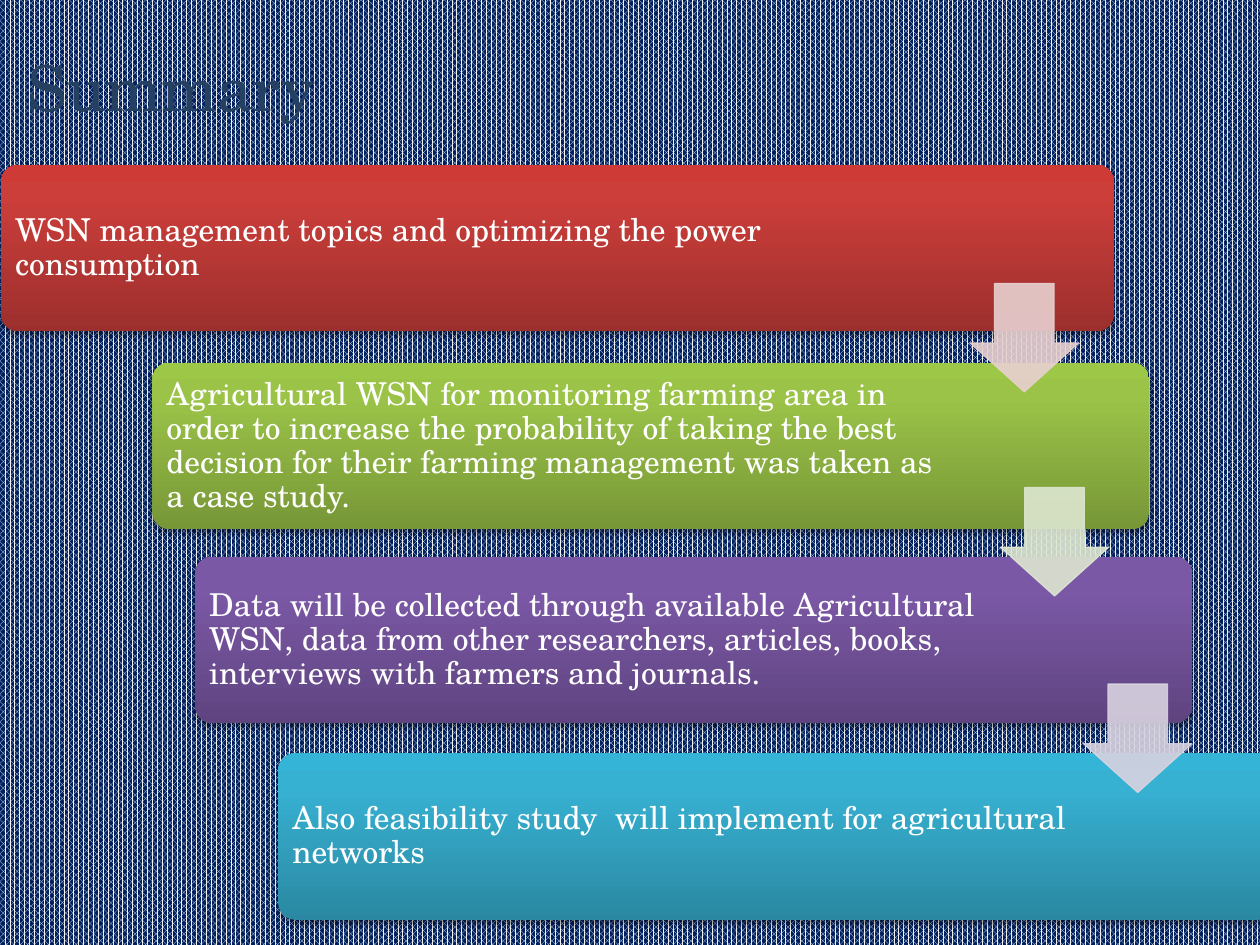
from copy import deepcopy

from lxml.etree import SubElement
from pptx import Presentation
from pptx.dml.color import RGBColor
from pptx.enum.dml import MSO_PATTERN
from pptx.enum.shapes import MSO_SHAPE
from pptx.enum.text import MSO_ANCHOR
from pptx.oxml.ns import qn
from pptx.util import Inches, Pt


def color(value):
    return RGBColor.from_string(value)


def add_text(text, left, top, width, height, size=18, ink="FFFFFF",
             side=0.07, edge=0.07, spacing=0.9):
    frame = slide.shapes.add_textbox(
        Inches(left), Inches(top), Inches(width), Inches(height)).text_frame
    frame.word_wrap = True
    frame.vertical_anchor = MSO_ANCHOR.MIDDLE
    frame.margin_left = frame.margin_right = Inches(side)
    frame.margin_top = frame.margin_bottom = Inches(edge)
    paragraph = frame.paragraphs[0]
    paragraph.line_spacing = spacing
    run = paragraph.add_run()
    run.text = text
    run.font.name = "TeX Gyre Schola"
    run.font.size = Pt(size)
    run.font.color.rgb = color(ink)


presentation = Presentation()
presentation.slide_width = Inches(10)
presentation.slide_height = Inches(7.5)
slide = presentation.slides.add_slide(presentation.slide_layouts[6])

backdrop = slide.background.fill
backdrop.patterned()
backdrop.pattern = MSO_PATTERN.PERCENT_75
backdrop.fore_color.rgb = color("F2F2F2")
backdrop.back_color.rgb = color("002060")

CARD_HEIGHT = 1.32
TEXT_INSET = 0.04

# left, top, card width, text width, gradient from bottom to top, wording
steps = [
    (0.01, 1.31, 8.83, 7.13, ("9C2F2D", "CB3E3A", "CE3B37"),
     "WSN management topics and optimizing the power consumption"),
    (1.21, 2.88, 7.91, 6.31, ("779737", "9BC348", "9DC746"),
     "Agricultural WSN for monitoring farming area in order to increase the "
     "probability of taking the best decision for their farming management "
     "was taken as a case study."),
    (1.55, 4.42, 7.91, 6.31, ("5F4480", "7B58A6", "7C57A8"),
     "Data will be collected through available Agricultural WSN, data from "
     "other researchers, articles, books, interviews with farmers and journals."),
    (2.21, 5.98, 7.91, 6.31, ("2A88A2", "37B1D2", "34B4D6"),
     "Also feasibility study  will implement for agricultural networks"),
]

for left, top, width, text_width, shades, wording in steps:
    card = slide.shapes.add_shape(
        MSO_SHAPE.ROUNDED_RECTANGLE,
        Inches(left), Inches(top), Inches(width), Inches(CARD_HEIGHT))
    card.adjustments[0] = 0.1
    card.line.fill.background()

    card.fill.gradient()
    card.fill.gradient_angle = 90
    properties = card._element.spPr
    stop_list = properties.find(".//" + qn("a:gsLst"))
    stop_list.append(deepcopy(stop_list[0]))
    for stop, position, shade in zip(card.fill.gradient_stops, (0, 0.8, 1), shades):
        stop.position = position
        stop.color.rgb = color(shade)

    card.shadow.inherit = False
    shadow = SubElement(
        properties.find(qn("a:effectLst")), qn("a:outerShdw"),
        blurRad=str(Pt(3.1)), dist=str(Pt(1.8)), dir="5400000", rotWithShape="0")
    shadow_color = SubElement(shadow, qn("a:srgbClr"), val="000000")
    SubElement(shadow_color, qn("a:alpha"), val="35000")

    add_text(wording, left + TEXT_INSET, top + TEXT_INSET,
             text_width, CARD_HEIGHT - 2 * TEXT_INSET)

for left, top, tint in [(7.7, 2.25, "E8D0D0"),
                        (7.94, 3.87, "DEE7D1"),
                        (8.6, 5.43, "D8D3E0")]:
    arrow = slide.shapes.add_shape(
        MSO_SHAPE.DOWN_ARROW, Inches(left), Inches(top), Inches(0.86), Inches(0.86))
    arrow.adjustments[0] = 0.55
    arrow.adjustments[1] = 0.45
    arrow.shadow.inherit = False
    arrow.line.width = Pt(0.75)
    for paint in (arrow.fill, arrow.line.fill):
        paint.solid()
        paint.fore_color.rgb = color(tint)
    for tint_color in arrow._element.spPr.iter(qn("a:srgbClr")):
        SubElement(tint_color, qn("a:alpha"), val="90000")

add_text("Summary", 0.12, 0.06, 9, 1.25, size=36, ink="254061",
         side=0.1, edge=0.05, spacing=1.0)

presentation.save("out.pptx")
